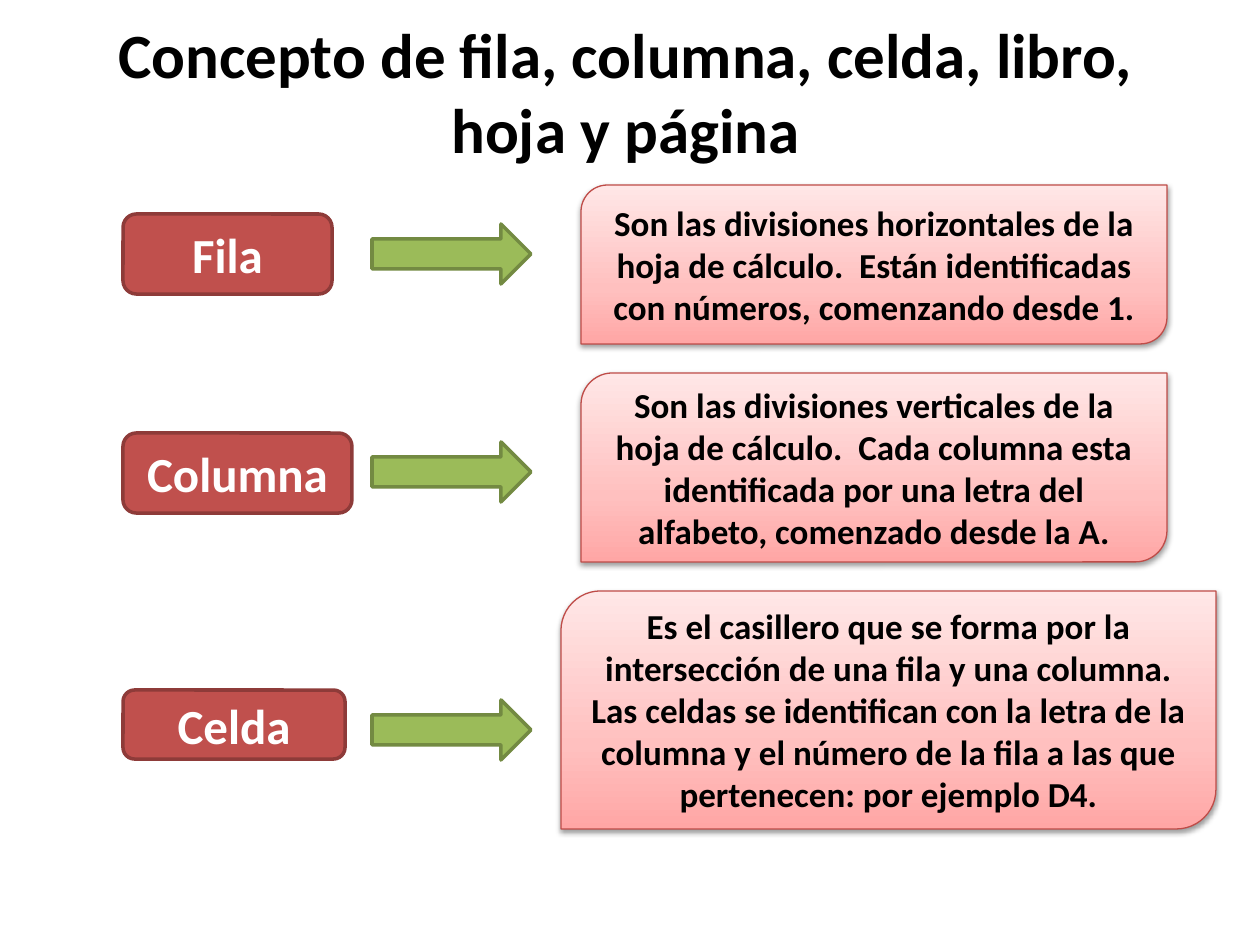
from copy import deepcopy

from lxml import etree
from pptx import Presentation
from pptx import util as u
from pptx.dml.color import RGBColor
from pptx.enum import shapes, text
from pptx.oxml import ns

PX = 914400 / 126


def color(value):
    return RGBColor.from_string(value)


def write(shape, words, size, ink, anchor=text.MSO_ANCHOR.MIDDLE):
    frame = shape.text_frame
    frame.word_wrap = True
    frame.vertical_anchor = anchor
    paragraph = frame.paragraphs[0]
    paragraph.text = words
    paragraph.alignment = text.PP_ALIGN.CENTER
    paragraph.font.name = "Calibri"
    paragraph.font.size = u.Pt(size)
    paragraph.font.bold = True
    paragraph.font.color.rgb = color(ink)


presentation = Presentation()
presentation.slide_width = u.Inches(10)
presentation.slide_height = u.Inches(7.5)
slide = presentation.slides.add_slide(presentation.slide_layouts[6])

title = slide.shapes.add_textbox(*[round(n * PX) for n in (74, 9, 1103, 165)])
write(title, "Concepto de fila, columna, celda, libro, hoja y página", 36, "000000", text.MSO_ANCHOR.TOP)

concepts = [
    ("Fila", (123, 214, 209, 80), 224, (581, 185, 586, 159),
     "Son las divisiones horizontales de la hoja de cálculo.  Están identificadas "
     "con números, comenzando desde 1."),
    ("Columna", (123, 433, 229, 80), 442, (581, 373, 586, 189),
     "Son las divisiones verticales de la hoja de cálculo.  Cada columna esta "
     "identificada por una letra del alfabeto, comenzado desde la A."),
    ("Celda", (123, 690, 222, 69), 700, (561, 591, 655, 238),
     "Es el casillero que se forma por la intersección de una fila y una columna. "
     "Las celdas se identifican con la letra de la columna y el número de la fila "
     "a las que pertenecen: por ejemplo D4."),
]
gradient = [(0, "FFA6A5"), (0.35, "FFC0BF"), (1, "FFE7E7")]
kinds = shapes.MSO_SHAPE

for name, label_box, arrow_top, definition_box, definition in concepts:
    parts = [
        (kinds.ROUNDED_RECTANGLE, label_box, "C0504D", "8E3B39", 2, name, 28, "FFFFFF"),
        (kinds.ROUND_2_DIAG_RECTANGLE, definition_box, None, "BF4C48", 0.75, definition, 20, "000000"),
        (kinds.RIGHT_ARROW, (372, arrow_top, 159, 60), "9BBB59", "738A42", 2, None, None, None),
    ]
    for kind, box, fill, outline, width, words, size, ink in parts:
        shape = slide.shapes.add_shape(kind, *[round(n * PX) for n in box])
        shape.shadow.inherit = False
        shape.line.color.rgb = color(outline)
        shape.line.width = u.Pt(width)
        if words:
            write(shape, words, size, ink)
        if fill:
            shape.fill.solid()
            shape.fill.fore_color.rgb = color(fill)
            continue
        shape.fill.gradient()
        shape.fill.gradient_angle = 90
        properties = shape.element.spPr
        stop_list = properties.find(".//" + ns.qn("a:gsLst"))
        stop_list.append(deepcopy(stop_list[-1]))
        for stop, (position, shade) in zip(shape.fill.gradient_stops, gradient):
            stop.position = position
            stop.color.rgb = color(shade)
        effects = properties.find(ns.qn("a:effectLst"))
        shadow = etree.SubElement(effects, ns.qn("a:outerShdw"), blurRad="40000",
                                  dist="20000", dir="5400000", rotWithShape="0")
        shadow_color = etree.SubElement(shadow, ns.qn("a:srgbClr"), val="000000")
        etree.SubElement(shadow_color, ns.qn("a:alpha"), val="38000")

presentation.save("out.pptx")
